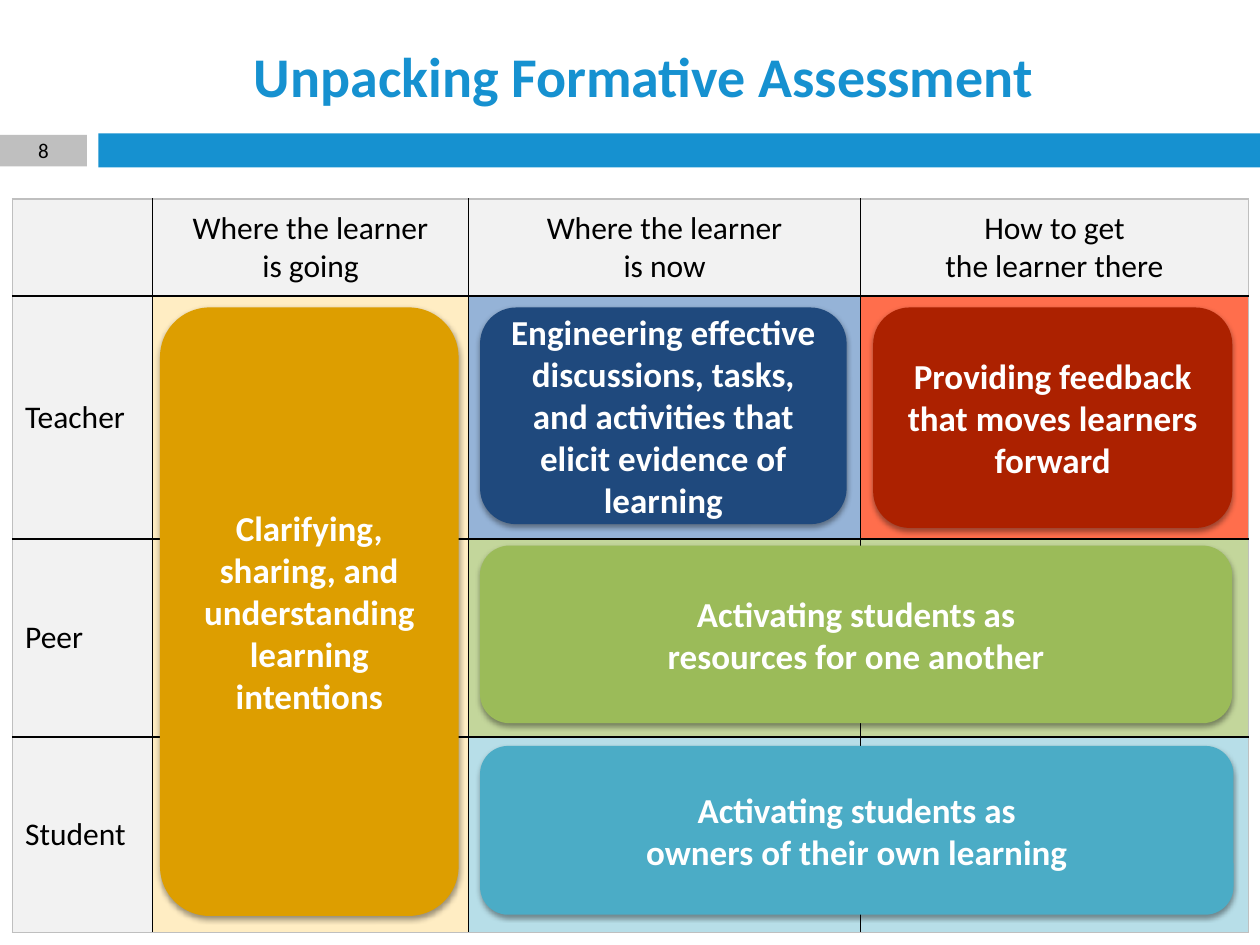
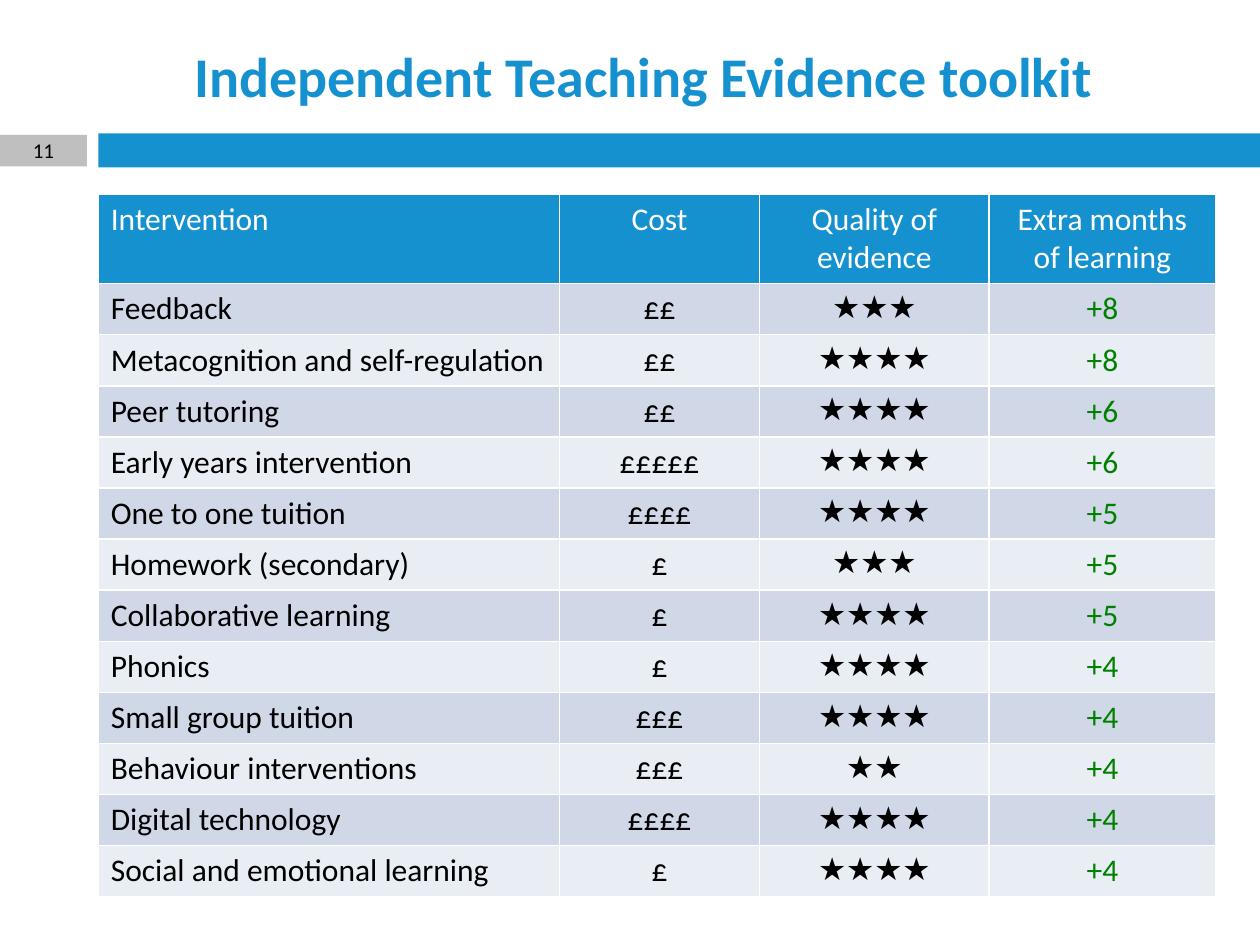
from dataclasses import dataclass
from typing import Sequence

from lxml import etree
from pptx import Presentation
from pptx.dml.color import RGBColor
from pptx.enum import shapes, text
from pptx.oxml import ns
from pptx.util import Inches, Pt


@dataclass(frozen=True)
class Theme:
    font: str = "Calibri"
    star_font: str = "Arial"
    blue: str = "1691D0"
    grey: str = "BFBFBF"
    header_grey: str = "F2F2F2"
    black: str = "000000"
    white: str = "FFFFFF"
    green: str = "008000"
    bands: tuple[str, str] = ("D0D8E8", "E9EDF4")
    title_size: int = 32
    strategy_size: int = 20
    table_size: int = 18
    number_size: int = 12


@dataclass(frozen=True)
class Box:
    left: float
    top: float
    width: float
    height: float

    def lengths(self) -> list[int]:
        return [Inches(v) for v in (self.left, self.top, self.width, self.height)]


@dataclass(frozen=True)
class Strategy:
    wording: str
    box: Box
    fill: str


@dataclass(frozen=True)
class Role:
    name: str
    fills: tuple[str, str, str]


@dataclass(frozen=True)
class Intervention:
    name: str
    cost: int
    evidence: int
    months: int


THEME = Theme()
TITLE_BOX = Box(0.78, 0.26, 8.66, 0.68)
BAND_BOX = Box(0.78, 1.06, 9.22, 0.27)
NUMBER_BOX = Box(0, 1.07, 0.69, 0.25)
CENTER = text.PP_ALIGN.CENTER
LEFT = text.PP_ALIGN.LEFT
MIDDLE = text.MSO_ANCHOR.MIDDLE
TOP = text.MSO_ANCHOR.TOP

STAGES = ["", "Where the learner\vis going", "Where the learner\vis now",
          "How to get\vthe learner there"]
ROLES = [
    Role("Teacher", ("FFEDC3", "95B3D7", "FF6E4C")),
    Role("Peer", ("FFEDC3", "C3D69B", "C3D69B")),
    Role("Student", ("FFEDC3", "B7DEE8", "B7DEE8")),
]
STRATEGIES = [
    Strategy("Clarifying, sharing, and understanding learning intentions",
             Box(1.27, 2.44, 2.37, 4.83), "DD9E00"),
    Strategy("Engineering effective discussions, tasks, and activities that "
             "elicit evidence of learning", Box(3.81, 2.44, 2.91, 1.72), "1F497D"),
    Strategy("Providing feedback that moves learners forward",
             Box(6.93, 2.44, 2.85, 1.75), "AC2100"),
    Strategy("Activating students as\nresources for one another",
             Box(3.81, 4.33, 5.97, 1.41), "9BBB59"),
    Strategy("Activating students as\nowners of their own learning",
             Box(3.81, 5.92, 5.98, 1.34), "4BACC6"),
]
TOOLKIT_HEADINGS = ["Intervention", "Cost", "Quality of evidence",
                    "Extra months of learning"]
INTERVENTIONS = [
    Intervention("Feedback", 2, 3, 8),
    Intervention("Metacognition and self-regulation", 2, 4, 8),
    Intervention("Peer tutoring", 2, 4, 6),
    Intervention("Early years intervention", 5, 4, 6),
    Intervention("One to one tuition", 4, 4, 5),
    Intervention("Homework (secondary)", 1, 3, 5),
    Intervention("Collaborative learning", 1, 4, 5),
    Intervention("Phonics", 1, 4, 4),
    Intervention("Small group tuition", 3, 4, 4),
    Intervention("Behaviour interventions", 3, 2, 4),
    Intervention("Digital technology", 4, 4, 4),
    Intervention("Social and emotional learning", 1, 4, 4),
]


def write(frame, wording: str, size: int, color: str, bold: bool = False,
          align=CENTER, font: str = THEME.font) -> None:
    frame.text = wording
    frame.word_wrap = True
    for paragraph in frame.paragraphs:
        paragraph.alignment = align
        for run in paragraph.runs:
            run.font.name = font
            run.font.size = Pt(size)
            run.font.bold = bold
            run.font.color.rgb = RGBColor.from_string(color)


def add_block(slide, box: Box, fill: str, preset=shapes.MSO_SHAPE.RECTANGLE):
    block = slide.shapes.add_shape(preset, *box.lengths())
    block.shadow.inherit = False
    block.fill.solid()
    block.fill.fore_color.rgb = RGBColor.from_string(fill)
    block.line.fill.background()
    block.text_frame.vertical_anchor = MIDDLE
    return block


def add_framed_slide(deck, title: str, number: int):
    """Add a slide with its title, blue band and numbered grey tab."""
    slide = deck.slides.add_slide(deck.slide_layouts[5])
    heading = slide.shapes.title
    heading.left, heading.top, heading.width, heading.height = TITLE_BOX.lengths()
    write(heading.text_frame, title, THEME.title_size, THEME.blue, bold=True)
    heading.text_frame.vertical_anchor = MIDDLE
    add_block(slide, BAND_BOX, THEME.blue)
    tab = add_block(slide, NUMBER_BOX, THEME.grey)
    frame = tab.text_frame
    frame.margin_top = frame.margin_bottom = 0
    write(frame, str(number), THEME.number_size, THEME.black)
    return slide


def add_soft_shadow(block) -> None:
    effects = block._element.spPr.find(ns.qn("a:effectLst"))
    shadow = etree.SubElement(effects, ns.qn("a:outerShdw"), blurRad=str(Pt(3.1)),
                              dist=str(Pt(1.6)), dir="5400000", rotWithShape="0")
    color = etree.SubElement(shadow, ns.qn("a:srgbClr"), val=THEME.black)
    etree.SubElement(color, ns.qn("a:alpha"), val="38000")


def add_grid(slide, box: Box, columns: Sequence[float], rows: Sequence[float]):
    grid = slide.shapes.add_table(len(rows), len(columns), *box.lengths()).table
    grid.horz_banding = False
    for column, width in zip(grid.columns, columns):
        column.width = Inches(width)
    for row, height in zip(grid.rows, rows):
        row.height = Inches(height)
    return grid


def style_cells(grid, fills: Sequence[Sequence[str]], inner: str, outer: str,
                anchor) -> None:
    """Rule and fill every cell; the outer edge may have its own colour."""
    last_row, last_column = len(grid.rows) - 1, len(grid.columns) - 1
    for r, row_fills in enumerate(fills):
        for c, fill in enumerate(row_fills):
            cell = grid.cell(r, c)
            cell.vertical_anchor = anchor
            properties = cell._tc.get_or_add_tcPr()
            on_edge = {"L": c == 0, "R": c == last_column,
                       "T": r == 0, "B": r == last_row}
            for side, is_outer in on_edge.items():
                line = etree.SubElement(properties, ns.qn(f"a:ln{side}"), w=str(Pt(1)))
                paint = etree.SubElement(line, ns.qn("a:solidFill"))
                etree.SubElement(paint, ns.qn("a:srgbClr"),
                                 val=outer if is_outer else inner)
            cell.fill.solid()
            cell.fill.fore_color.rgb = RGBColor.from_string(fill)


def add_assessment_slide(deck) -> None:
    slide = add_framed_slide(deck, "Unpacking Formative Assessment", 8)
    grid = add_grid(slide, Box(0.1, 1.58, 9.8, 5.82), [1.11, 2.51, 3.11, 3.08],
                    [0.77, 1.93, 1.57, 1.55])
    fills = [[THEME.header_grey] * len(STAGES)]
    fills += [[THEME.header_grey, *role.fills] for role in ROLES]
    style_cells(grid, fills, THEME.black, THEME.grey, MIDDLE)
    for c, stage in enumerate(STAGES):
        write(grid.cell(0, c).text_frame, stage, THEME.table_size, THEME.black)
    for r, role in enumerate(ROLES, start=1):
        write(grid.cell(r, 0).text_frame, role.name, THEME.table_size,
              THEME.black, align=LEFT)
    for strategy in STRATEGIES:
        block = add_block(slide, strategy.box, strategy.fill,
                          shapes.MSO_SHAPE.ROUNDED_RECTANGLE)
        add_soft_shadow(block)
        write(block.text_frame, strategy.wording, THEME.strategy_size,
              THEME.white, bold=True)


def add_toolkit_slide(deck) -> None:
    slide = add_framed_slide(deck, "Independent Teaching Evidence toolkit", 11)
    count = len(INTERVENTIONS)
    grid = add_grid(slide, Box(0.78, 1.54, 8.87, 5.5), [3.66, 1.59, 1.82, 1.8],
                    [0.65] + [0.37] * count)
    width = len(TOOLKIT_HEADINGS)
    fills = [[THEME.blue] * width]
    fills += [[THEME.bands[i % 2]] * width for i in range(count)]
    style_cells(grid, fills, THEME.white, THEME.white, TOP)
    for c, heading in enumerate(TOOLKIT_HEADINGS):
        write(grid.cell(0, c).text_frame, heading, THEME.table_size, THEME.white,
              align=CENTER if c else LEFT)
    for r, item in enumerate(INTERVENTIONS, start=1):
        entries = [
            (item.name, THEME.black, LEFT, THEME.font),
            ("£" * item.cost, THEME.black, CENTER, THEME.font),
            ("★" * item.evidence, THEME.black, CENTER, THEME.star_font),
            (f"+{item.months}", THEME.green, CENTER, THEME.font),
        ]
        for c, (wording, color, align, font) in enumerate(entries):
            write(grid.cell(r, c).text_frame, wording, THEME.table_size, color,
                  align=align, font=font)


def main() -> None:
    deck = Presentation()
    deck.slide_width, deck.slide_height = Inches(10), Inches(7.5)
    add_assessment_slide(deck)
    add_toolkit_slide(deck)
    deck.save("out.pptx")


if __name__ == "__main__":
    main()
